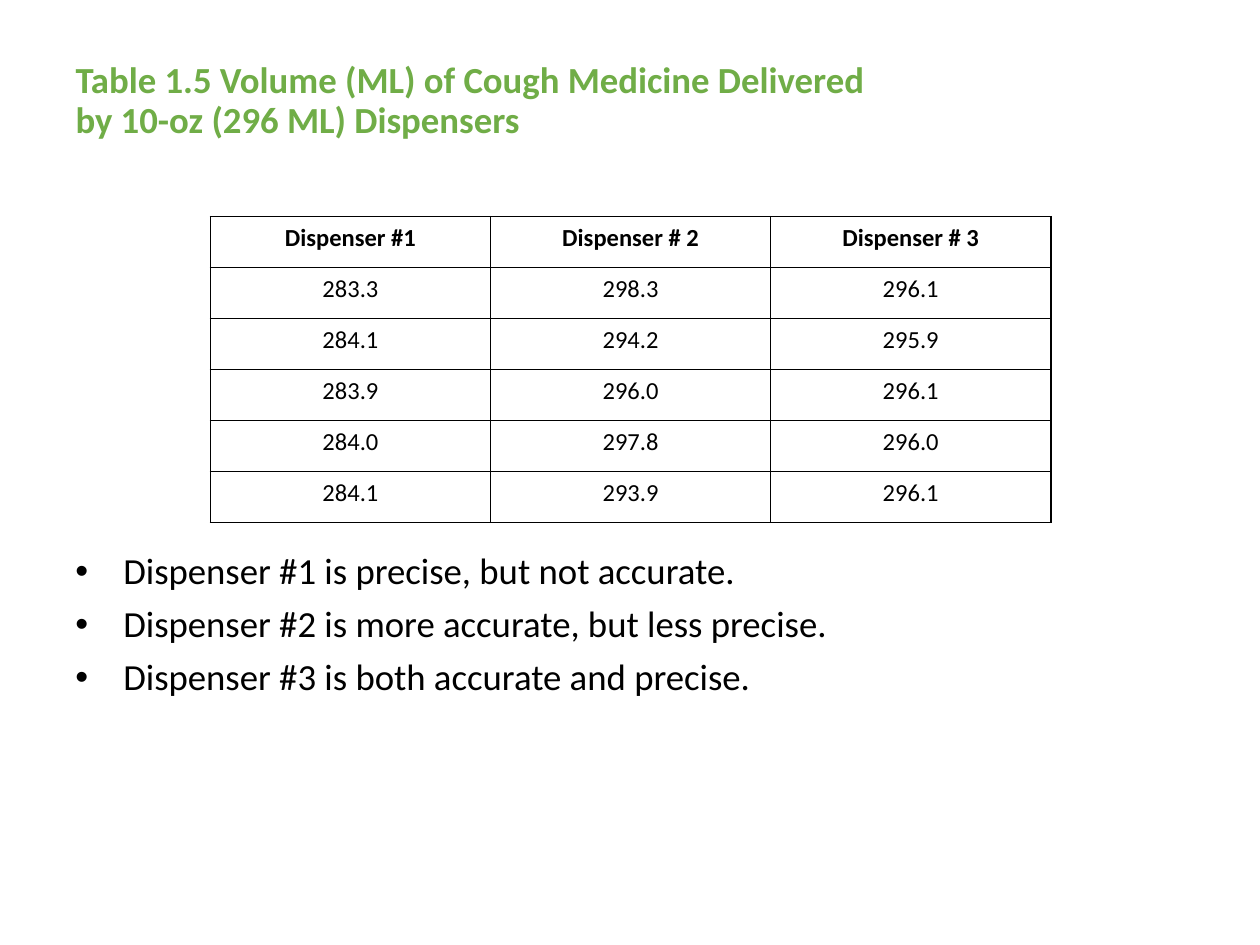
from lxml.etree import SubElement
from pptx import Presentation
from pptx.dml.color import RGBColor as RGB
from pptx.enum.text import MSO_ANCHOR as Anchor, MSO_AUTO_SIZE as Fit, PP_ALIGN as Align
from pptx.oxml.ns import qn
from pptx.util import Inches, Pt

HUES = {"title": "70AD47", "text": "000000", "line": "000000"}

TITLE = "Table 1.5 Volume (ML) of Cough Medicine Delivered by 10-oz (296 ML) Dispensers"
ROWS = [
    ["Dispenser #1", "Dispenser # 2", "Dispenser # 3"],
    ["283.3", "298.3", "296.1"],
    ["284.1", "294.2", "295.9"],
    ["283.9", "296.0", "296.1"],
    ["284.0", "297.8", "296.0"],
    ["284.1", "293.9", "296.1"],
]
POINTS = [
    "Dispenser #1 is precise, but not accurate.",
    "Dispenser #2 is more accurate, but less precise.",
    "Dispenser #3 is both accurate and precise.",
]


def assign(item, **values):
    for name, value in values.items():
        setattr(item, name, value)


class Deck:
    face = "Calibri"

    def __init__(self, wide, high):
        self.file = Presentation()
        assign(self.file, slide_width=Inches(wide), slide_height=Inches(high))
        self.slide = self.file.slides.add_slide(self.file.slide_layouts[5])

    def style(self, para, size, hue="text", bold=False):
        assign(para.font, name=self.face, size=Pt(size), bold=bold)
        para.font.color.rgb = RGB.from_string(HUES[hue])

    def title(self, text, left, top, wide, high):
        box = self.slide.shapes.title
        assign(box, left=Inches(left), top=Inches(top),
               width=Inches(wide), height=Inches(high))
        frame = box.text_frame
        # The deeper lower margin lifts the text above the middle
        assign(frame, text=text, word_wrap=True, auto_size=Fit.NONE,
               vertical_anchor=Anchor.MIDDLE, margin_bottom=Inches(0.37))
        para = frame.paragraphs[0]
        assign(para, alignment=Align.LEFT, line_spacing=0.9)
        self.style(para, 21, "title", True)

    def bullets(self, items, left, top, wide, high, drop):
        box = self.slide.shapes.add_textbox(*map(Inches, (left, top, wide, high)))
        frame = box.text_frame
        assign(frame, word_wrap=True, margin_top=Inches(drop))
        for i, item in enumerate(items):
            para = frame.add_paragraph() if i else frame.paragraphs[0]
            para.text = item
            assign(para, line_spacing=0.9, space_before=Pt(7.5 if i else 0))
            props = para._p.get_or_add_pPr()
            props.set("marL", str(Inches(0.38)))
            props.set("indent", str(-Inches(0.38)))
            SubElement(props, qn("a:buFont"), typeface="Arial")
            SubElement(props, qn("a:buChar"), char="•")
            self.style(para, 21)

    def border(self, cell):
        props = cell._tc.get_or_add_tcPr()
        for i, side in enumerate(("lnL", "lnR", "lnT", "lnB")):
            line = props.makeelement(qn("a:" + side), {"w": str(Pt(1))})
            fill = SubElement(line, qn("a:solidFill"))
            SubElement(fill, qn("a:srgbClr"), val=HUES["line"])
            props.insert(i, line)

    def table(self, rows, left, top, wide, high):
        area = map(Inches, (left, top, wide, high))
        grid = self.slide.shapes.add_table(len(rows), len(rows[0]), *area).table
        assign(grid, first_row=False, horz_banding=False)
        pad = Inches(0.05)
        for r, row in enumerate(rows):
            for c, text in enumerate(row):
                cell = grid.cell(r, c)
                assign(cell, text=text, margin_left=pad, margin_right=pad,
                       margin_top=pad, margin_bottom=pad)
                cell.fill.background()
                self.border(cell)
                para = cell.text_frame.paragraphs[0]
                para.alignment = Align.CENTER
                self.style(para, 14, bold=r == 0)


def main():
    deck = Deck(10, 7.5)
    # Heading
    deck.title(TITLE, 0.5, 0.26, 6.67, 1.41)
    # Findings, set below the table
    deck.bullets(POINTS, 0.5, 1.37, 8.82, 5.2, drop=3.02)
    # Measured volumes
    deck.table(ROWS, 1.67, 1.72, 6.67, 2.43)
    deck.file.save("out.pptx")


if __name__ == "__main__":
    main()
